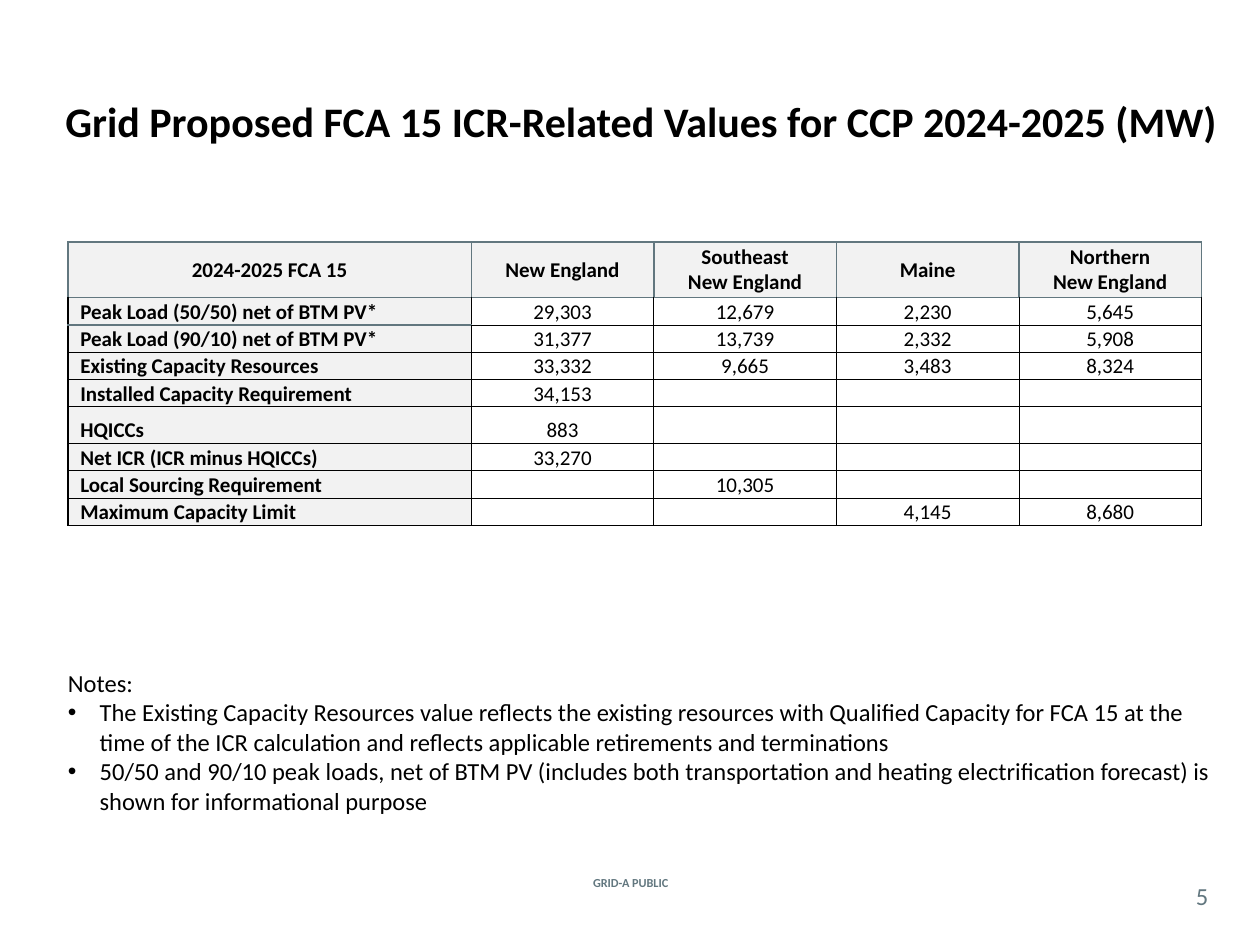
"""Build the slide of proposed FCA 15 ICR-related values."""
import lxml.etree
import pptx
import pptx.dml.color
import pptx.enum.text
import pptx.oxml.ns
import pptx.util

Cm = pptx.util.Cm
Pt = pptx.util.Pt
LEFT = pptx.enum.text.PP_ALIGN.LEFT
CENTER = pptx.enum.text.PP_ALIGN.CENTER
TOP = pptx.enum.text.MSO_ANCHOR.TOP
MIDDLE = pptx.enum.text.MSO_ANCHOR.MIDDLE
BOTTOM = pptx.enum.text.MSO_ANCHOR.BOTTOM
qn = pptx.oxml.ns.qn
hex_color = pptx.dml.color.RGBColor.from_string
BLACK, SLATE, PALE = "000000", "62777F", "F2F2F2"


def write_text(frame, text, size=12, color=BLACK, bold=False, align=LEFT, bullets_from=None):
    frame.word_wrap = True
    for index, line in enumerate(text.split("\n")):
        paragraph = frame.paragraphs[0] if index == 0 else frame.add_paragraph()
        paragraph.alignment = align
        if bullets_from is not None and index >= bullets_from:
            properties = paragraph._p.get_or_add_pPr()
            properties.set("marL", str(Cm(0.64)))
            properties.set("indent", str(-Cm(0.64)))
            lxml.etree.SubElement(properties, qn("a:buFont"), typeface="Arial")
            lxml.etree.SubElement(properties, qn("a:buChar"), char="•")
        if not line:
            lxml.etree.SubElement(paragraph._p, qn("a:endParaRPr"), sz=str(size * 100))
            continue
        run = paragraph.add_run()
        run.text = line
        run.font.name = "Calibri"
        run.font.size = Pt(size)
        run.font.bold = bold
        run.font.color.rgb = hex_color(color)


def set_border(cell, side, color, width):
    line = lxml.etree.SubElement(cell._tc.get_or_add_tcPr(), qn(f"a:ln{side}"), w=str(Pt(width)))
    fill = lxml.etree.SubElement(line, qn("a:solidFill"))
    lxml.etree.SubElement(fill, qn("a:srgbClr"), val=color)


presentation = pptx.Presentation()
presentation.slide_width = Cm(25.4)
presentation.slide_height = Cm(19.05)
slide = presentation.slides.add_slide(presentation.slide_layouts[6])

notes = """Notes:
The Existing Capacity Resources value reflects the existing resources with Qualified Capacity for FCA 15 at the time of the ICR calculation and reflects applicable retirements and terminations
50/50 and 90/10 peak loads, net of BTM PV (includes both transportation and heating electrification forecast) is shown for informational purpose"""
text_boxes = [
    ((10.85, 17.58, 3.73, 0.43), MIDDLE, "GRID-A PUBLIC",
     dict(size=7, color=SLATE, bold=True, align=CENTER)),
    ((1.07, 0.84, 23.93, 3.18), MIDDLE,
     "Grid Proposed FCA 15 ICR-Related Values for CCP 2024-2025 (MW)",
     dict(size=24, bold=True)),
    ((23.7, 17.68, 1.07, 0.74), MIDDLE, "5", dict(size=14, color=SLATE, align=CENTER)),
    ((1.12, 13.34, 23.88, 4.01), TOP, notes, dict(size=14, bullets_from=1)),
]
for box, anchor, text, text_format in text_boxes:
    shape = slide.shapes.add_textbox(*map(Cm, box))
    shape.text_frame.vertical_anchor = anchor
    write_text(shape.text_frame, text, **text_format)

rows = [
    ["2024-2025 FCA 15", "New England", "Southeast\nNew England", "Maine", "Northern\nNew England"],
    ["Peak Load (50/50) net of BTM PV*", "29,303", "12,679", "2,230", "5,645"],
    ["Peak Load (90/10) net of BTM PV*", "31,377", "13,739", "2,332", "5,908"],
    ["Existing Capacity Resources", "33,332", "9,665", "3,483", "8,324"],
    ["Installed Capacity Requirement", "34,153", "", "", ""],
    ["HQICCs", "883", "", "", ""],
    ["Net ICR (ICR minus HQICCs)", "33,270", "", "", ""],
    ["Local Sourcing Requirement", "", "10,305", "", ""],
    ["Maximum Capacity Limit", "", "", "4,145", "8,680"],
]
column_widths = [8.13] + [3.68] * 4
row_heights = [1.12] + [0.55] * 4 + [0.74] + [0.55] * 3
table = slide.shapes.add_table(
    len(rows), len(column_widths), Cm(1.37), Cm(4.88),
    Cm(sum(column_widths)), Cm(sum(row_heights))).table
table.first_row = False
table.horz_banding = False
for column, width in zip(table.columns, column_widths):
    column.width = Cm(width)
for row, height in zip(table.rows, row_heights):
    row.height = Cm(height)

thin, thick, header_line = (BLACK, 0.5), (BLACK, 1), (SLATE, 1)
for row_index, row in enumerate(rows):
    for column_index, text in enumerate(row):
        cell = table.cell(row_index, column_index)
        is_header = row_index == 0
        is_label = column_index == 0
        is_last = column_index == len(row) - 1
        cell.margin_left = Cm(0.25 if is_label and not is_header else 0)
        cell.margin_right = cell.margin_top = cell.margin_bottom = 0
        cell.vertical_anchor = MIDDLE if is_header else BOTTOM
        write_text(cell.text_frame, text, bold=is_header or is_label,
                   align=LEFT if is_label and not is_header else CENTER)
        borders = {
            "L": thick if is_label else thin,
            "R": thick if is_last else thin,
            "T": header_line if row_index == 1 or is_label and row_index == 2 else thin,
            "B": header_line if is_label and row_index == 1 else thin,
        }
        for side, border in borders.items():
            set_border(cell, side, *(header_line if is_header else border))
        if is_header or is_label:
            cell.fill.solid()
            cell.fill.fore_color.rgb = hex_color(PALE)
        else:
            cell.fill.background()

presentation.save("out.pptx")
